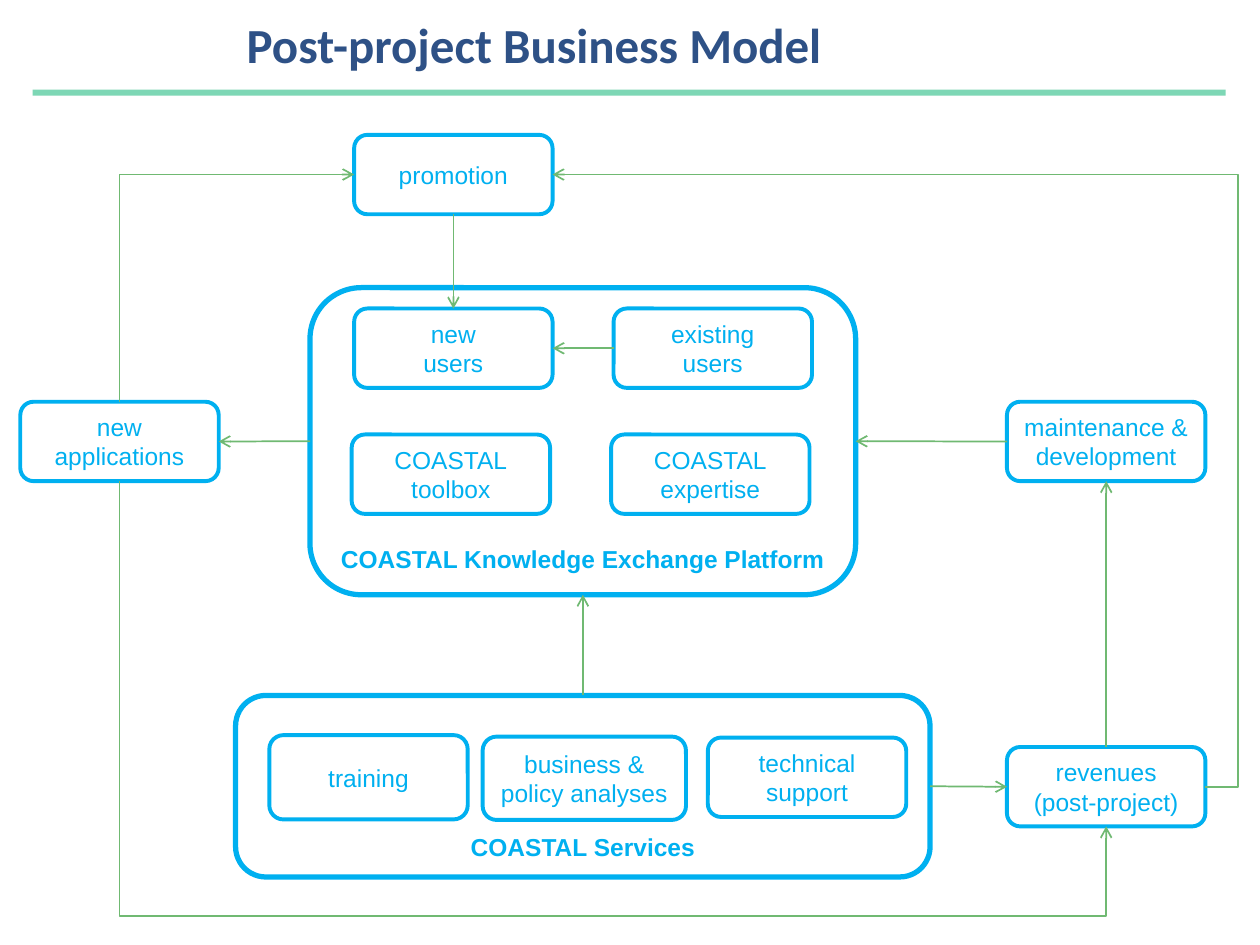
import pptx
import pptx.util
import pptx.dml.color
import pptx.enum.shapes
import pptx.enum.text
import pptx.oxml
import pptx.oxml.ns

Cm, Pt = pptx.util.Cm, pptx.util.Pt
SHAPE = pptx.enum.shapes.MSO_SHAPE
LINK = pptx.enum.shapes.MSO_CONNECTOR
ALIGN = pptx.enum.text.PP_ALIGN
ANCHOR = pptx.enum.text.MSO_ANCHOR
BLUE, GREEN, MINT, NAVY = "00B0F0", "70B972", "7DD7B5", "2E5186"
TOP, LEFT, BOTTOM, RIGHT = range(4)
WIDE, HIGH = 4, 1.6  # usual box size in cm


def color(code):
    return pptx.dml.color.RGBColor.from_string(code)


def write(frame, text, size=14, font="Arial", tint=BLUE, bold=False,
          align=ALIGN.CENTER, anchor=ANCHOR.MIDDLE, space=None):
    """Fill a text frame, one paragraph for each line."""
    frame.word_wrap = True
    frame.auto_size = pptx.enum.text.MSO_AUTO_SIZE.NONE
    frame.vertical_anchor = anchor
    frame.text = text
    for para in frame.paragraphs:
        para.alignment = align
        para.line_spacing = space
        para.font.size = Pt(size)
        para.font.name = font
        para.font.bold = bold
        para.font.color.rgb = color(tint)


def add_title(slide, text):
    title = slide.shapes.title
    title.left, title.top = Cm(4.72), Cm(0.3)
    title.width, title.height = Cm(21.9), Cm(1.5)
    write(title.text_frame, text, size=28, font="Calibri", tint=NAVY, bold=True,
          align=ALIGN.LEFT, anchor=ANCHOR.TOP, space=0.9)


def add_bar(slide):
    bar = slide.shapes.add_shape(SHAPE.RECTANGLE, Cm(0.66), Cm(1.81), Cm(24.05), Cm(0.12))
    bar.shadow.inherit = False
    bar.fill.solid()
    bar.fill.fore_color.rgb = color(MINT)
    bar.line.fill.background()


def add_box(slide, text, left, top, wide=WIDE, high=HIGH, line=2.25, **form):
    box = slide.shapes.add_shape(SHAPE.ROUNDED_RECTANGLE,
                                 Cm(left), Cm(top), Cm(wide), Cm(high))
    box.shadow.inherit = False
    box.fill.background()
    box.line.color.rgb = color(BLUE)
    box.line.width = Pt(line)
    write(box.text_frame, text, **form)
    return box


def add_frame(slide, text, *place):
    """A large box with its bold label at the bottom."""
    return add_box(slide, text, *place, line=3, bold=True, anchor=ANCHOR.BOTTOM)


def style(link):
    link.line.color.rgb = color(GREEN)
    link.line.width = Pt(1)
    props = link._element.spPr
    head = pptx.oxml.parse_xml(
        f'<a:tailEnd {pptx.oxml.ns.nsdecls("a")} type="arrow"/>')
    link.line._get_or_add_ln().append(head)
    props.append(pptx.oxml.parse_xml(f'<a:effectLst {pptx.oxml.ns.nsdecls("a")}/>'))


def add_arrow(slide, start, out, end, into):
    link = slide.shapes.add_connector(LINK.STRAIGHT, 0, 0, 0, 0)
    link.begin_connect(start, out)
    link.end_connect(end, into)
    style(link)


def middle(box, side):
    """Middle point of one side of a box."""
    x, y = box.left + box.width // 2, box.top + box.height // 2
    return {TOP: (x, box.top), LEFT: (box.left, y),
            BOTTOM: (x, box.top + box.height),
            RIGHT: (box.left + box.width, y)}[side]


def add_elbow(slide, start, out, end, into, turns=0, bend=None):
    """Elbow turned by quarter turns; bend is the share of the way to the
    middle leg, and without it there is a single corner."""
    (ax, ay), (bx, by) = middle(start, out), middle(end, into)
    mx, my = (ax + bx) // 2, (ay + by) // 2
    dx, dy = (bx - ax) // 2, (by - ay) // 2
    for _ in range(4 - turns):  # undo the turn about the centre
        dx, dy = -dy, dx
    link = slide.shapes.add_connector(LINK.ELBOW, mx - dx, my - dy, mx + dx, my + dy)
    props = link._element.spPr
    if turns:
        props.xfrm.set("rot", str(turns * 5400000))
    geom = props.find(pptx.oxml.ns.qn("a:prstGeom"))
    if bend is None:
        geom.set("prst", "bentConnector2")
    else:
        geom.find(pptx.oxml.ns.qn("a:avLst")).append(pptx.oxml.parse_xml(
            f'<a:gd {pptx.oxml.ns.nsdecls("a")} name="adj1" '
            f'fmla="val {round(bend * 100000)}"/>'))
    style(link)


def main():
    deck = pptx.Presentation()
    deck.slide_width, deck.slide_height = Cm(25.4), Cm(19.05)
    slide = deck.slides.add_slide(deck.slide_layouts[5])
    add_bar(slide)
    add_title(slide, "Post-project Business Model")

    # Outer boxes
    money = add_box(slide, "revenues\n(post-project)", 20.3, 15.06)
    apps = add_box(slide, "new\napplications", 0.41, 8.1)
    upkeep = add_box(slide, "maintenance & development", 20.3, 8.1)
    promo = add_box(slide, "promotion", 7.14, 2.72)

    # Services
    add_box(slide, "business &\npolicy analyses", 9.73, 14.85, 4.1, 1.68)
    add_box(slide, "technical support", 14.27, 14.87)
    add_box(slide, "training", 5.43, 14.82, high=1.7)
    service = add_frame(slide, "COASTAL Services", 4.75, 14.02, 14, 3.66)

    # Platform
    add_box(slide, "COASTAL\ntoolbox", 7.09, 8.76)
    add_box(slide, "COASTAL\nexpertise", 12.32, 8.76)
    hub = add_frame(slide, "COASTAL Knowledge Exchange Platform", 6.25, 5.8, 11, 6.19)
    fresh = add_box(slide, "new\nusers", 7.14, 6.22)
    known = add_box(slide, "existing\nusers", 12.37, 6.22)

    # Straight arrows
    for ends in [(upkeep, LEFT, hub, RIGHT), (service, RIGHT, money, LEFT),
                 (money, TOP, upkeep, BOTTOM), (known, LEFT, fresh, RIGHT),
                 (promo, BOTTOM, fresh, TOP), (hub, LEFT, apps, RIGHT),
                 (service, TOP, hub, BOTTOM)]:
        add_arrow(slide, *ends)

    # Arrows with corners
    add_elbow(slide, apps, BOTTOM, money, BOTTOM, turns=3, bend=1.26)
    add_elbow(slide, money, RIGHT, promo, RIGHT, bend=-0.05)
    add_elbow(slide, apps, TOP, promo, LEFT, turns=1)

    deck.save("out.pptx")


if __name__ == "__main__":
    main()
